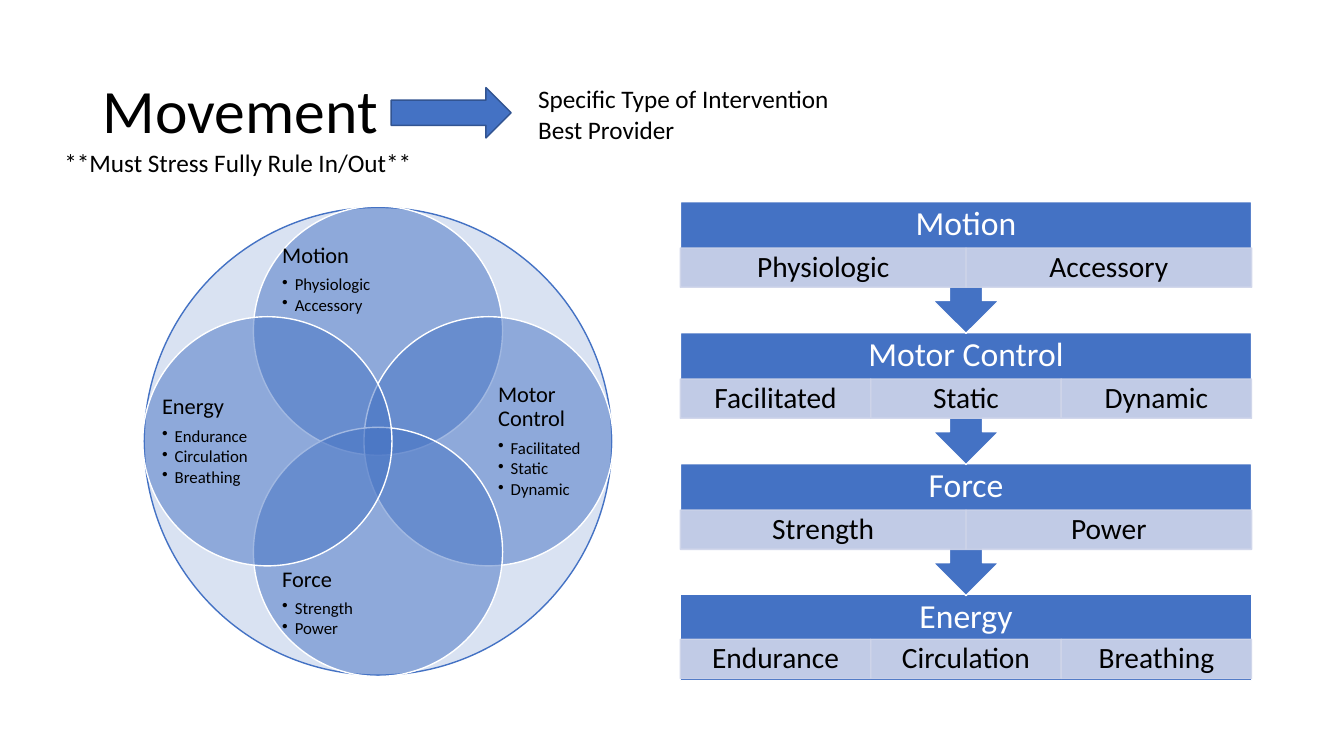
from dataclasses import dataclass
from typing import Any

from lxml import etree
from pptx import Presentation
from pptx import util as u
from pptx.dml.color import RGBColor
from pptx.enum import shapes, text
from pptx.oxml.ns import qn

BLUE, PALE, RING = "4472C4", "CFD5EA", "B4C7E7"
WHITE, BLACK, EDGE = "FFFFFF", "000000", "325491"
FONT = "Calibri"
KINDS = shapes.MSO_SHAPE


@dataclass
class Frame:
    left: float
    top: float
    width: float
    height: float

    def lengths(self) -> list[u.Pt]:
        return [u.Pt(n) for n in (self.left, self.top, self.width, self.height)]


@dataclass
class Topic:
    name: str
    aspects: list[str]
    across: int  # direction of its circle from the centre
    down: int


TOPICS = [
    Topic("Motion", ["Physiologic", "Accessory"], 0, -1),
    Topic("Motor Control", ["Facilitated", "Static", "Dynamic"], 1, 0),
    Topic("Force", ["Strength", "Power"], 0, 1),
    Topic("Energy", ["Endurance", "Circulation", "Breathing"], -1, 0),
]


def set_values(target: Any, values: dict[str, Any]) -> None:
    for name, value in values.items():
        setattr(target, name, value)


def paint(fill: Any, colour: str, opacity: int = 100) -> None:
    fill.solid()
    fill.fore_color.rgb = RGBColor.from_string(colour)
    if opacity < 100:
        tone = fill._xPr.find(".//" + qn("a:srgbClr"))
        etree.SubElement(tone, qn("a:alpha"), val=str(opacity * 1000))


def set_frame(box: Any, margins: tuple[float, float], **values: Any) -> None:
    side, end = (u.Pt(n) for n in margins)
    set_values(box.text_frame, {
        "margin_left": side, "margin_right": side,
        "margin_top": end, "margin_bottom": end,
        "word_wrap": True, "auto_size": text.MSO_AUTO_SIZE.NONE,
        "vertical_anchor": text.MSO_ANCHOR.MIDDLE, **values,
    })


def write(para: Any, words: str, size: float, colour: str = BLACK, **values: Any) -> None:
    set_values(para, {"alignment": text.PP_ALIGN.LEFT, "line_spacing": 0.9, **values})
    span = para.add_run()
    span.text = words
    set_values(span.font, {"size": u.Pt(size), "name": FONT})
    paint(span.font.fill, colour)


def add_bullet(para: Any) -> None:
    props = para._p.get_or_add_pPr()
    props.set("marL", str(u.Pt(9)))
    props.set("indent", str(u.Pt(-9)))
    etree.SubElement(props, qn("a:buChar"), char="•")


def draw(page: Any, kind: Any, frame: Frame, fill: str, line: str,
         opacity: int = 100, line_opacity: int = 100) -> Any:
    shape = page.shapes.add_shape(kind, *frame.lengths())
    shape.shadow.inherit = False
    paint(shape.fill, fill, opacity)
    paint(shape.line.fill, line, line_opacity)
    shape.line.width = u.Pt(1)
    return shape


def add_note(page: Any, frame: Frame, lines: list[str]) -> None:
    box = page.shapes.add_textbox(*frame.lengths())
    set_frame(box, (7.2, 3.6), word_wrap=False, vertical_anchor=text.MSO_ANCHOR.TOP,
              auto_size=text.MSO_AUTO_SIZE.SHAPE_TO_FIT_TEXT)
    for number, words in enumerate(lines):
        para = box.text_frame.add_paragraph() if number else box.text_frame.paragraphs[0]
        write(para, words, 18, line_spacing=1.0)


def add_circle(page: Any, topic: Topic) -> None:
    centre_x, centre_y, size, reach = 270, 315.2, 178, 79
    x, y = centre_x + topic.across * reach, centre_y + topic.down * reach
    draw(page, KINDS.OVAL, Frame(x - size / 2, y - size / 2, size, size), BLUE, WHITE, 50)
    # The list sits in the outer part of the circle
    width, height = (68.4, 136.8) if topic.across else (136.8, 56.9)
    x, y = centre_x + topic.across * 120, centre_y + topic.down * 115.6
    box = page.shapes.add_textbox(*Frame(x - width / 2, y - height / 2, width, height).lengths())
    set_frame(box, (0, 0))
    write(box.text_frame.paragraphs[0], topic.name, 16, space_after=u.Pt(5.6))
    for aspect in topic.aspects:
        para = box.text_frame.add_paragraph()
        write(para, aspect, 12, level=1, space_after=u.Pt(1.8))
        add_bullet(para)


def add_step(page: Any, topic: Topic, number: int) -> None:
    left, top, width = 486, 144 + number * 93.6, 408
    last = number == len(TOPICS) - 1
    if last:
        draw(page, KINDS.RECTANGLE, Frame(left, top, width, 61.2), BLUE, WHITE)
    else:
        callout = draw(page, KINDS.UP_ARROW_CALLOUT, Frame(left, top, width, 94.2), BLUE, WHITE)
        callout.rotation = 180
    heading = page.shapes.add_textbox(*Frame(left, top, width, 33.1).lengths())
    set_frame(heading, (13.7, 13.7))
    centre = text.PP_ALIGN.CENTER
    write(heading.text_frame.paragraphs[0], topic.name, 24, WHITE, alignment=centre)
    # Equal cells below the heading
    cell_width = width / len(topic.aspects)
    cell_top = top + (31.8 if last else 33.1)
    for column, aspect in enumerate(topic.aspects):
        frame = Frame(left + column * cell_width, cell_top, cell_width, 28.1)
        cell = draw(page, KINDS.RECTANGLE, frame, PALE, PALE, 90, 90)
        set_frame(cell, (11.5, 2.2))
        write(cell.text_frame.paragraphs[0], aspect, 21, alignment=centre)


def main() -> None:
    deck = Presentation()
    set_values(deck, {"slide_width": u.Pt(960), "slide_height": u.Pt(540)})
    page = deck.slides.add_slide(deck.slide_layouts.get_by_name("Title Only"))

    # Title
    title = page.shapes.title
    set_values(title, dict(zip(("left", "top", "width", "height"),
                               Frame(66.2, 28.8, 828, 104.4).lengths())))
    set_frame(title, (7.2, 3.6))
    write(title.text_frame.paragraphs[0], "Movement", 44)

    # Overlapping circles inside a ring
    draw(page, KINDS.OVAL, Frame(103, 148.2, 334, 334), RING, BLUE, 50)
    for topic in TOPICS:
        add_circle(page, topic)

    # Notes beside and under the title
    add_note(page, Frame(377.3, 56.2, 224.6, 51.1),
             ["Specific Type of Intervention", "Best Provider"])
    draw(page, KINDS.RIGHT_ARROW, Frame(279.4, 62.6, 85.7, 36), BLUE, EDGE)
    add_note(page, Frame(38.9, 101.5, 265, 28.8), ["**Must Stress Fully Rule In/Out**"])

    # Chain of steps, drawn from the last so each arrow overlaps the next step
    for number, topic in reversed(list(enumerate(TOPICS))):
        add_step(page, topic, number)

    deck.save("out.pptx")


if __name__ == "__main__":
    main()
